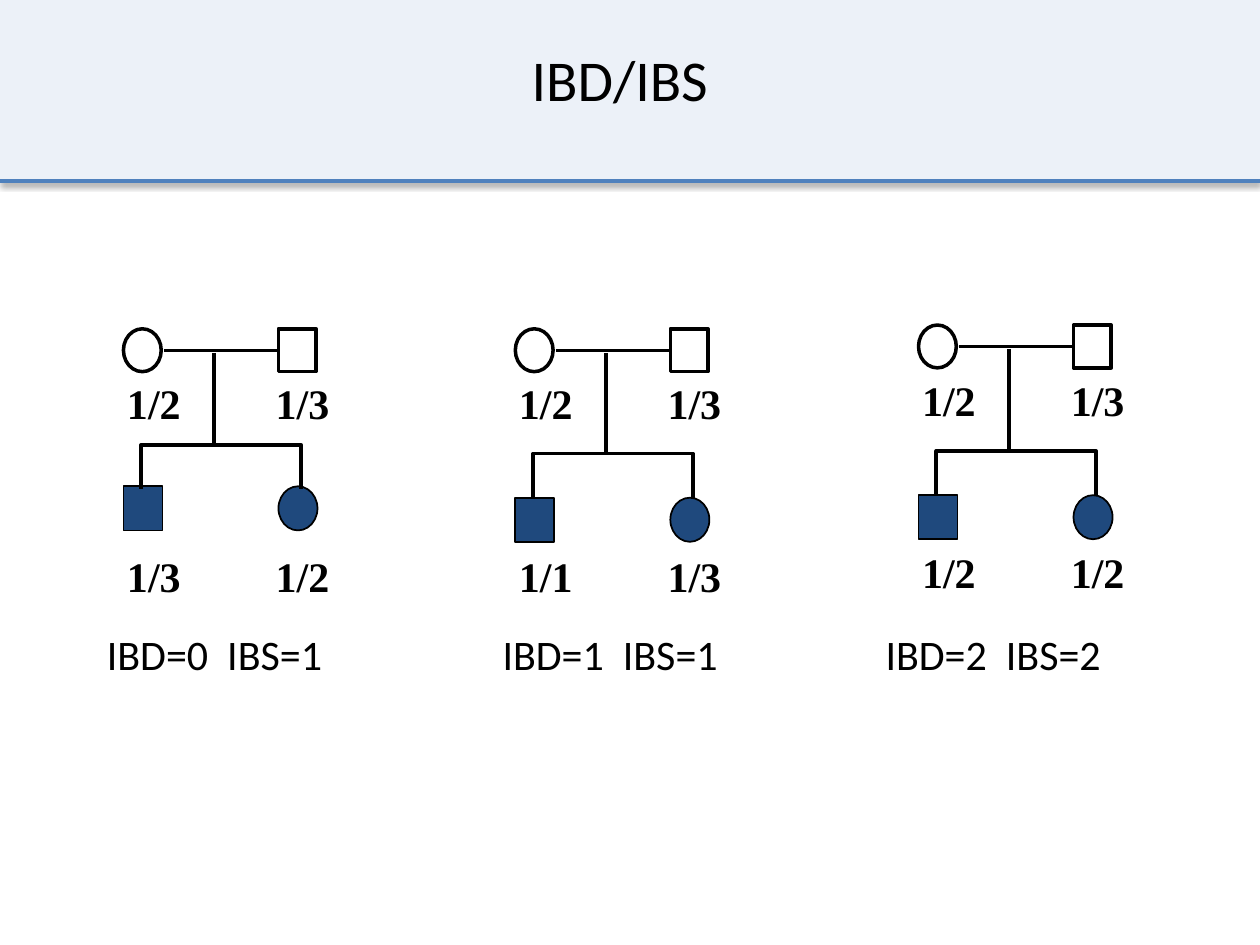
from lxml import etree
from pptx import Presentation
from pptx import util as u
from pptx.dml.color import RGBColor
from pptx.enum import shapes, text
from pptx.oxml.ns import qn

COLORS = {"ink": "000000", "band": "ECF1F8", "rule": "4F81BD", "affected": "1F497D"}
RECT = shapes.MSO_SHAPE.RECTANGLE
OVAL = shapes.MSO_SHAPE.OVAL
GAP = 1.23  # from the left symbol to the right symbol of a couple


class Pedigree:
    """Style and current slide, with one method per kind of element."""

    sans, serif = "Calibri", "Times New Roman"

    def __init__(self, slide):
        self.slide = slide

    def color(self, name):
        return RGBColor.from_string(COLORS[name])

    def outline(self, item, width, color="ink"):
        item.line.color.rgb = self.color(color)
        item.line.width = u.Pt(width)

    def symbol(self, kind, x, y, w, h, fill=None, line=None):
        shape = self.slide.shapes.add_shape(
            kind, u.Inches(x), u.Inches(y), u.Inches(w), u.Inches(h))
        shape.shadow.inherit = False
        if fill:
            shape.fill.solid()
            shape.fill.fore_color.rgb = self.color(fill)
        else:
            shape.fill.background()
        if line:
            self.outline(shape, line)
        else:
            shape.line.fill.background()
        return shape

    def parent(self, kind, x, y):
        return self.symbol(kind, x, y, 0.3, 0.34, line=2)

    def child(self, kind, x, y):
        return self.symbol(kind, x, y, 0.31, 0.35, "affected", 1)

    def line(self, x1, y1, x2, y2, width=2, color="ink"):
        connector = self.slide.shapes.add_connector(
            shapes.MSO_CONNECTOR.STRAIGHT,
            u.Inches(x1), u.Inches(y1), u.Inches(x2), u.Inches(y2))
        self.outline(connector, width, color)
        effects = etree.SubElement(connector._element.spPr, qn("a:effectLst"))
        return connector, effects

    def bracket(self, x, y, w, h):
        builder = self.slide.shapes.build_freeform(u.Inches(x), u.Inches(y + h))
        corners = [(x, y), (x + w, y), (x + w, y + h)]
        builder.add_line_segments(
            [(u.Inches(px), u.Inches(py)) for px, py in corners], close=False)
        shape = builder.convert_to_shape()
        shape.shadow.inherit = False
        shape.fill.background()
        self.outline(shape, 2)

    def label(self, words, x, y, w=0.63, h=0.51, size=24, font=None,
              bold=False, centered=False):
        box = self.slide.shapes.add_textbox(
            u.Inches(x), u.Inches(y), u.Inches(w), u.Inches(h))
        frame = box.text_frame
        frame.text = words
        frame.word_wrap = centered
        paragraph = frame.paragraphs[0]
        if centered:
            frame.vertical_anchor = text.MSO_ANCHOR.MIDDLE
            paragraph.alignment = text.PP_ALIGN.CENTER
        run_font = paragraph.runs[0].font
        run_font.name = font or self.sans
        run_font.size = u.Pt(size)
        run_font.bold = bold
        run_font.color.rgb = self.color("ink")

    def genotypes(self, pair, x, y):
        for column, genotype in enumerate(pair):
            self.label(genotype, x - 0.07 + column * 1.18, y,
                       font=self.serif, bold=True)

    def header(self, title):
        _, effects = self.line(0, 1.42, 10, 1.42, 4.5, "rule")
        shadow = etree.SubElement(
            effects, qn("a:outerShdw"), blurRad=str(u.Pt(3.1)),
            dist=str(u.Pt(1.8)), dir="5400000", rotWithShape="0")
        black = etree.SubElement(shadow, qn("a:srgbClr"), val=COLORS["ink"])
        etree.SubElement(black, qn("a:alpha"), val="35000")
        self.symbol(RECT, 0, 0, 10, 1.42, "band")
        self.label(title, 0.67, 0, 8.5, 1.25, size=33, centered=True)

    def family(self, x, y, bar_y, child_y, children, caption, caption_x):
        # Parents and children
        father = self.parent(RECT, x + GAP, y)
        self.parent(OVAL, x, y)
        self.child(RECT, x, child_y)
        self.child(OVAL, x + GAP, child_y)

        # Lines of marriage and descent
        self.bracket(x + 0.14, bar_y, 1.27, 0.35)
        marriage, _ = self.line(x + 0.32, y + 0.17, x + GAP, y + 0.17)
        marriage.end_connect(father, 1)
        self.line(x + 0.72, y + 0.19, x + 0.72, bar_y)

        # Genotypes and sharing
        self.genotypes(("1/2", "1/3"), x, y + 0.34)
        self.genotypes(children, x, y + 1.71)
        self.label(caption, caption_x, 4.94, 1.93)


def main():
    prs = Presentation()
    prs.slide_width, prs.slide_height = u.Inches(10), u.Inches(7.5)
    pedigree = Pedigree(prs.slides.add_slide(prs.slide_layouts[6]))

    pedigree.header("IBD/IBS")

    # left, top, sibling bar, children's top, children's genotypes, caption, its left
    families = [
        (0.98, 2.61, 3.53, 3.86, ("1/3", "1/2"), "IBD=0  IBS=1", 0.75),
        (4.09, 2.61, 3.6, 3.95, ("1/1", "1/3"), "IBD=1  IBS=1", 3.89),
        (7.29, 2.58, 3.58, 3.93, ("1/2", "1/2"), "IBD=2  IBS=2", 6.93),
    ]
    for family in families:
        pedigree.family(*family)

    prs.save("out.pptx")


if __name__ == "__main__":
    main()
